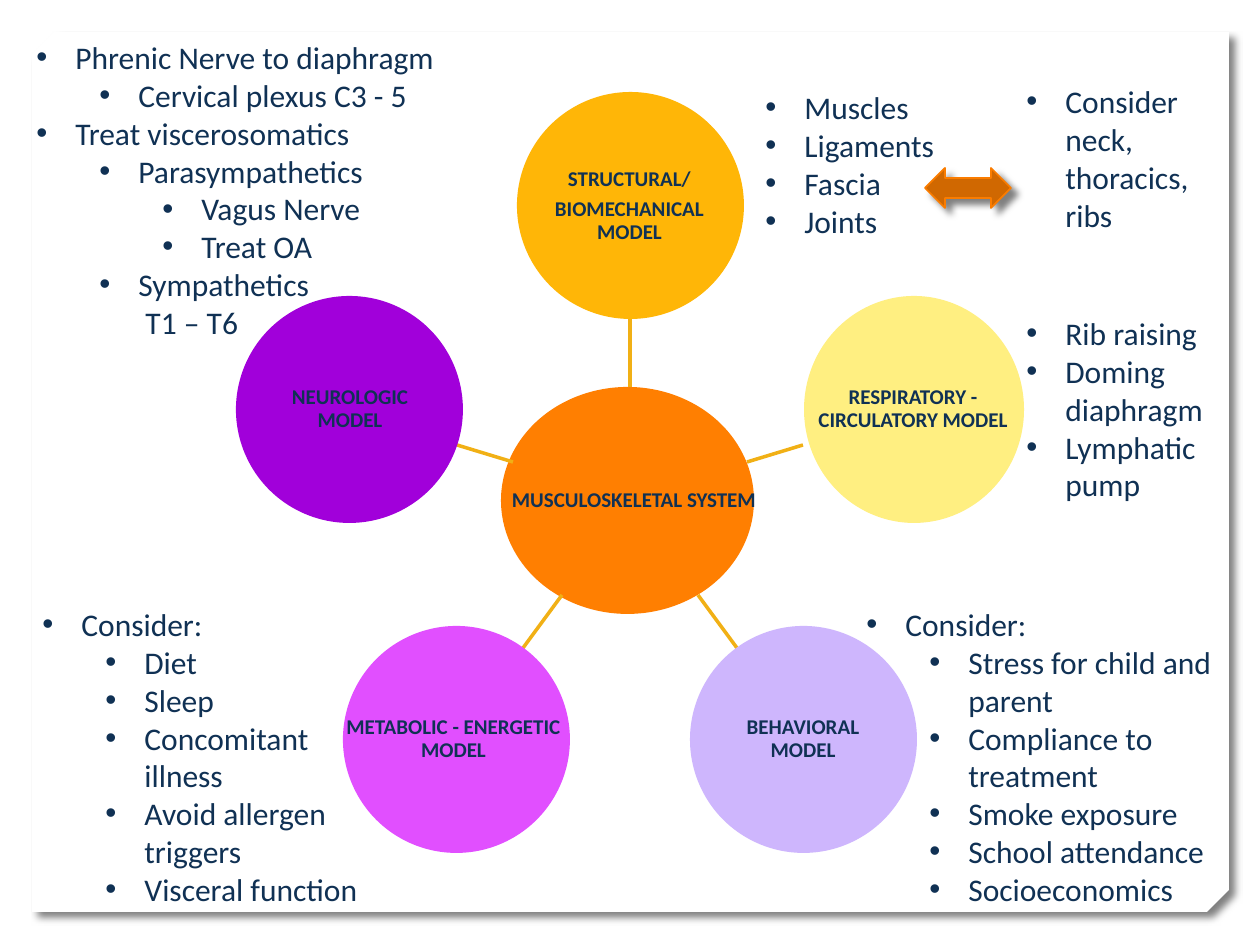
from dataclasses import dataclass

from lxml.etree import SubElement
from pptx import Presentation
from pptx.dml.color import RGBColor
from pptx.enum.shapes import MSO_CONNECTOR as Connector, MSO_SHAPE as Shape
from pptx.enum.text import MSO_ANCHOR as Anchor, PP_ALIGN as Align
from pptx.oxml.ns import qn
from pptx.util import Emu, Pt


@dataclass(frozen=True)
class Theme:
    font: str = "Calibri"
    text: str = "103154"
    card: str = "FFFFFF"
    shadow: str = "000000"
    spoke: str = "F1B015"
    hub: str = "FF7F01"
    structural: str = "FFB607"
    respiratory: str = "FFEF81"
    behavioral: str = "CEB6FD"
    metabolic: str = "E14FFF"
    neurologic: str = "A100DA"
    arrow: str = "D06801"
    arrow_line: str = "FA7C00"
    label_size: int = 12
    list_size: int = 18


THEME = Theme()
EMU_PER_PX = 914400 / 126
INDENT = 39
LEVEL_STEP = 63

MODELS = [
    (THEME.structural, (517, 92, 227, 227), (547, 126, 165, 160),
     ["STRUCTURAL/", "BIOMECHANICAL MODEL"], (630, 387, 630, 319)),
    (THEME.respiratory, (804, 296, 220, 227), (816, 329, 194, 160),
     ["RESPIRATORY - CIRCULATORY MODEL"], (747, 462, 803, 445)),
    (THEME.behavioral, (690, 626, 227, 227), (723, 659, 160, 160),
     ["BEHAVIORAL MODEL"], (698, 595, 737, 648)),
    (THEME.metabolic, (343, 626, 227, 227), (343, 659, 221, 160),
     ["METABOLIC - ENERGETIC MODEL"], (562, 595, 523, 648)),
    (THEME.neurologic, (236, 296, 227, 227), (270, 329, 160, 160),
     ["NEUROLOGIC MODEL"], (513, 462, 457, 445)),
]

LISTS = [
    ((30, 599, 359, 318), [
        (0, "Consider:"), (1, "Diet"), (1, "Sleep"), (1, "Concomitant illness"),
        (1, "Avoid allergen triggers"), (1, "Visceral function")]),
    ((24, 32, 432, 318), [
        (0, "Phrenic Nerve to diaphragm"), (1, "Cervical plexus C3 - 5"),
        (0, "Treat viscerosomatics"), (1, "Parasympathetics"),
        (2, "Vagus Nerve"), (2, "Treat OA"), (1, "Sympathetics\v T1 – T6")]),
    ((1014, 308, 231, 204), [
        (0, "Rib raising"), (0, "Doming diaphragm"), (0, "Lymphatic pump")]),
    ((753, 82, 216, 165), [
        (0, "Muscles"), (0, "Ligaments"), (0, "Fascia"), (0, "Joints")]),
    ((1014, 76, 208, 165), [(0, "Consider neck, thoracics, ribs")]),
    ((854, 599, 375, 318), [
        (0, "Consider:"), (1, "Stress for child and parent"),
        (1, "Compliance to treatment"), (1, "Smoke exposure"),
        (1, "School attendance"), (1, "Socioeconomics")]),
]


def px(value):
    return Emu(round(value * EMU_PER_PX))


def rgb(color):
    return RGBColor.from_string(color)


def add_shape(slide, kind, box, fill, line=None):
    shape = slide.shapes.add_shape(kind, *map(px, box))
    shape.shadow.inherit = False
    shape.fill.solid()
    shape.fill.fore_color.rgb = rgb(fill)
    if line:
        shape.line.color.rgb = rgb(line)
        shape.line.width = Pt(1)
    else:
        shape.line.fill.background()
    return shape


def add_shadow(shape):
    effects = shape._element.spPr.find(qn("a:effectLst"))
    shadow = SubElement(effects, qn("a:outerShdw"), blurRad=str(Pt(4)),
                        dist=str(Pt(5)), dir="2700000", algn="tl", rotWithShape="0")
    color = SubElement(shadow, qn("a:srgbClr"), val=THEME.shadow)
    SubElement(color, qn("a:alpha"), val="50000")


def add_card(slide):
    card = add_shape(slide, Shape.SNIP_2_DIAG_RECTANGLE, (32, 32, 1197, 880), THEME.card)
    card.adjustments[0] = 0
    card.adjustments[1] = 0.025
    card._element.spPr.xfrm.set("flipV", "1")
    add_shadow(card)


def add_spoke(slide, ends):
    spoke = slide.shapes.add_connector(Connector.STRAIGHT, *map(px, ends))
    spoke.line.color.rgb = rgb(THEME.spoke)
    spoke.line.width = Pt(2)
    SubElement(spoke._element.spPr, qn("a:effectLst"))


def add_text_frame(slide, box):
    frame = slide.shapes.add_textbox(*map(px, box)).text_frame
    frame.word_wrap = True
    return frame


def add_paragraph(frame, index, text):
    paragraph = frame.add_paragraph() if index else frame.paragraphs[0]
    paragraph.text = text
    return paragraph


def set_font(paragraph, size, bold=False):
    font = paragraph.font
    font.name = THEME.font
    font.size = Pt(size)
    font.bold = bold
    font.color.rgb = rgb(THEME.text)


def add_label(slide, box, lines):
    frame = add_text_frame(slide, box)
    frame.vertical_anchor = Anchor.MIDDLE
    frame.margin_left = frame.margin_right = px(1)
    frame.margin_top = frame.margin_bottom = px(1)
    for index, line in enumerate(lines):
        paragraph = add_paragraph(frame, index, line)
        paragraph.alignment = Align.CENTER
        paragraph.line_spacing = 0.9
        paragraph.space_after = Pt(4)
        set_font(paragraph, THEME.label_size, bold=True)


def add_bullet_list(slide, box, items):
    frame = add_text_frame(slide, box)
    for index, (level, text) in enumerate(items):
        paragraph = add_paragraph(frame, index, text)
        paragraph.level = level
        properties = paragraph._p.get_or_add_pPr()
        properties.set("marL", str(px(INDENT + level * LEVEL_STEP)))
        properties.set("indent", str(px(-INDENT)))
        SubElement(properties, qn("a:buFont"), typeface="Arial")
        SubElement(properties, qn("a:buChar"), char="•")
        set_font(paragraph, THEME.list_size)


def main():
    presentation = Presentation()
    presentation.slide_width = px(1260)
    presentation.slide_height = px(945)
    slide = presentation.slides.add_slide(presentation.slide_layouts[6])

    add_card(slide)
    add_shape(slide, Shape.OVAL, (501, 387, 253, 227), THEME.hub)
    add_label(slide, (498, 421, 272, 160), ["MUSCULOSKELETAL SYSTEM"])
    for fill, circle, label, lines, spoke in MODELS:
        add_spoke(slide, spoke)
        add_shape(slide, Shape.OVAL, circle, fill)
        add_label(slide, label, lines)
    for box, items in LISTS:
        add_bullet_list(slide, box, items)
    arrow = add_shape(slide, Shape.LEFT_RIGHT_ARROW, (925, 168, 86, 40),
                      THEME.arrow, THEME.arrow_line)
    add_shadow(arrow)

    presentation.save("out.pptx")


if __name__ == "__main__":
    main()
